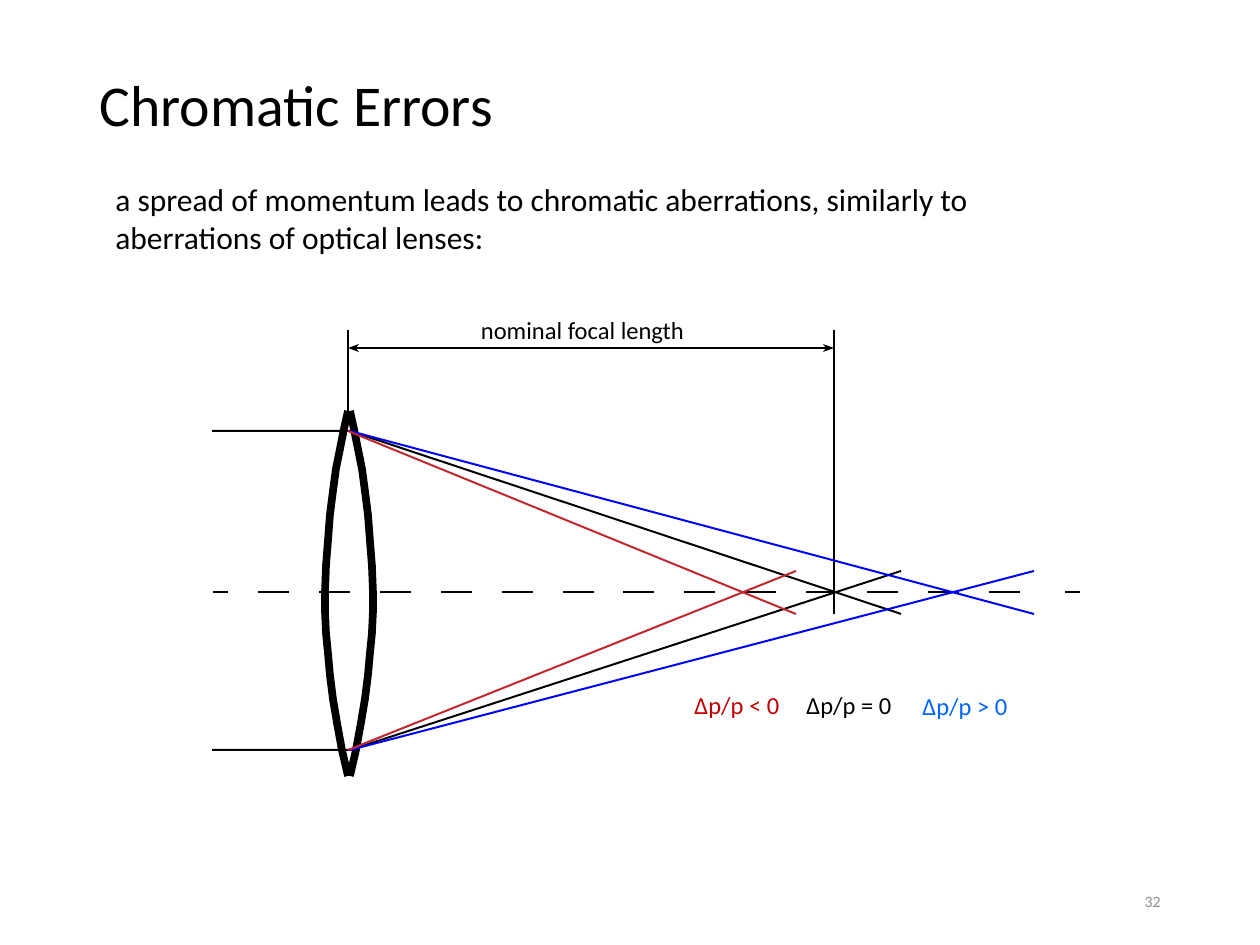
import pptx
import pptx.util
import pptx.dml.color
import pptx.enum.shapes
import pptx.enum.text
from lxml import etree

PX = 914400 / 126
FONT = "Calibri"
COLORS = {
    "black": "000000", "blue": "0000FF", "red": "C1272D",
    "label blue": "0066FF", "label red": "C00000", "grey": "8C8C8C",
}
ALIGN = pptx.enum.text.PP_ALIGN
ANCHOR = pptx.enum.text.MSO_ANCHOR

# Content: text, box (left, top, width, height), size, colour, alignment, anchor
TITLE = ("Chromatic Errors", (87, 50, 1086, 116), 33, "black", ALIGN.LEFT, ANCHOR.MIDDLE)
INTRO = ("a spread of momentum leads to chromatic aberrations, similarly to "
         "aberrations of optical lenses:",
         (103, 174, 953, 89), 18, "black", ALIGN.LEFT, ANCHOR.TOP)
LABELS = [
    ("nominal focal length", (402, 309, 361, 43), 14, "black", ALIGN.CENTER, ANCHOR.TOP),
    ("Δp/p > 0", (897, 685, 136, 43), 14, "label blue", ALIGN.CENTER, ANCHOR.TOP),
    ("Δp/p = 0", (781, 684, 136, 43), 14, "black", ALIGN.CENTER, ANCHOR.TOP),
    ("Δp/p < 0", (669, 684, 136, 43), 14, "label red", ALIGN.CENTER, ANCHOR.TOP),
    ("32", (890, 876, 283, 50), 9, "grey", ALIGN.RIGHT, ANCHOR.MIDDLE),
]

# Lens outline: (bulge away from the lens plane, y); both faces share it
LENS_PROFILE = [
    (0, 411), (4, 429), (8, 449), (12, 469), (15, 491), (18, 515), (20, 541),
    (22, 566), (23, 593), (23, 611), (22, 633), (20, 653), (18, 675), (15, 699),
    (11, 723), (6, 750), (0, 776),
]
LENS_FACES = [(348, -1), (350, 1)]

# Optical axis
AXIS_Y = 592
AXIS_ENDS = [(213, 228), (1065, 1080)]
FIRST_DASH, LAST_DASH, DASH_COUNT, DASH_LENGTH = 258, 989, 13, 31

# Rays: (y at the lens, y at the far end)
RAY_HEIGHTS = [(431, 614), (750, 571)]
BEAM_START, BEAM_BEND, BEAM_END = 212, 350, 901
OFF_MOMENTUM = [("blue", 350, 1034), ("red", 348, 796)]

# Focal length dimension
DIM_Y, DIM_LEFT, DIM_RIGHT = 348, 348, 834
EXTENSION_LINES = [(DIM_RIGHT, 330, 614), (DIM_LEFT, 330, 421)]
HEAD_LENGTH, HEAD_NOTCH, HEAD_HALF = 11, 8, 4


def emu(*lengths):
    return [round(length * PX) for length in lengths]


def rgb(name):
    return pptx.dml.color.RGBColor.from_string(COLORS[name])


def write(box, text, place, size, color, align, anchor):
    box.left, box.top, box.width, box.height = emu(*place)
    frame = box.text_frame
    frame.word_wrap = True
    frame.auto_size = pptx.enum.text.MSO_AUTO_SIZE.NONE
    frame.vertical_anchor = anchor
    frame.text = text
    para = frame.paragraphs[0]
    para.alignment = align
    para.font.name = FONT
    para.font.size = pptx.util.Pt(size)
    para.font.color.rgb = rgb(color)
    return para


def add_text(page, text, place, *style):
    write(page.shapes.add_textbox(*emu(*place)), text, place, *style)


def add_line(page, start, end, color="black", width=1.13):
    line = page.shapes.add_connector(
        pptx.enum.shapes.MSO_CONNECTOR.STRAIGHT, *emu(*start, *end))
    line.line.color.rgb = rgb(color)
    line.line.width = pptx.util.Pt(width)
    etree.SubElement(line._element.spPr, pptx.oxml.ns.qn("a:effectLst"))


def add_outline(page, points, width=None):
    """Draw an open black stroke, or a filled polygon when no width is given."""
    builder = page.shapes.build_freeform(*points[0], scale=PX)
    builder.add_line_segments(points[1:], close=width is None)
    shape = builder.convert_to_shape()
    shape.shadow.inherit = False
    if width is None:
        shape.fill.solid()
        shape.fill.fore_color.rgb = rgb("black")
        shape.line.fill.background()
    else:
        shape.fill.background()
        shape.line.color.rgb = rgb("black")
        shape.line.width = pptx.util.Pt(width)


def draw_lens(page):
    for edge, side in LENS_FACES:
        add_outline(page, [(edge + side * bulge, y) for bulge, y in LENS_PROFILE], 4.38)


def draw_axis(page):
    step = (LAST_DASH - FIRST_DASH) / (DASH_COUNT - 1)
    starts = [FIRST_DASH + step * i for i in range(DASH_COUNT)]
    dashes = [(x, x + DASH_LENGTH) for x in starts]
    for left, right in AXIS_ENDS[:1] + dashes + AXIS_ENDS[1:]:
        add_line(page, (left, AXIS_Y), (right, AXIS_Y))


def draw_dimension(page):
    for x, top, bottom in EXTENSION_LINES:
        add_line(page, (x, bottom), (x, top), width=0.75)
    add_line(page, (DIM_LEFT + HEAD_NOTCH, DIM_Y), (DIM_RIGHT - HEAD_NOTCH, DIM_Y), width=0.75)
    for tip, inward in [(DIM_LEFT, 1), (DIM_RIGHT, -1)]:
        back = tip + inward * HEAD_LENGTH
        notch = tip + inward * HEAD_NOTCH
        add_outline(page, [(tip, DIM_Y), (back, DIM_Y + HEAD_HALF),
                           (notch, DIM_Y), (back, DIM_Y - HEAD_HALF)])


def main():
    deck = pptx.Presentation()
    deck.slide_width, deck.slide_height = emu(1260, 945)
    page = deck.slides.add_slide(deck.slide_layouts[5])

    # Title and introduction
    write(page.shapes.title, *TITLE).line_spacing = 0.9
    add_text(page, *INTRO)

    # Lens, axis and nominal beam
    draw_lens(page)
    draw_axis(page)
    for near, far in RAY_HEIGHTS:
        add_outline(page, [(BEAM_START, near), (BEAM_BEND, near), (BEAM_END, far)], 1.13)

    # Dimension and off-momentum rays
    draw_dimension(page)
    for color, start, end in OFF_MOMENTUM:
        for near, far in RAY_HEIGHTS:
            add_line(page, (start, near), (end, far), color)

    # Labels and page number
    for label in LABELS:
        add_text(page, *label)

    deck.save("out.pptx")


if __name__ == "__main__":
    main()
